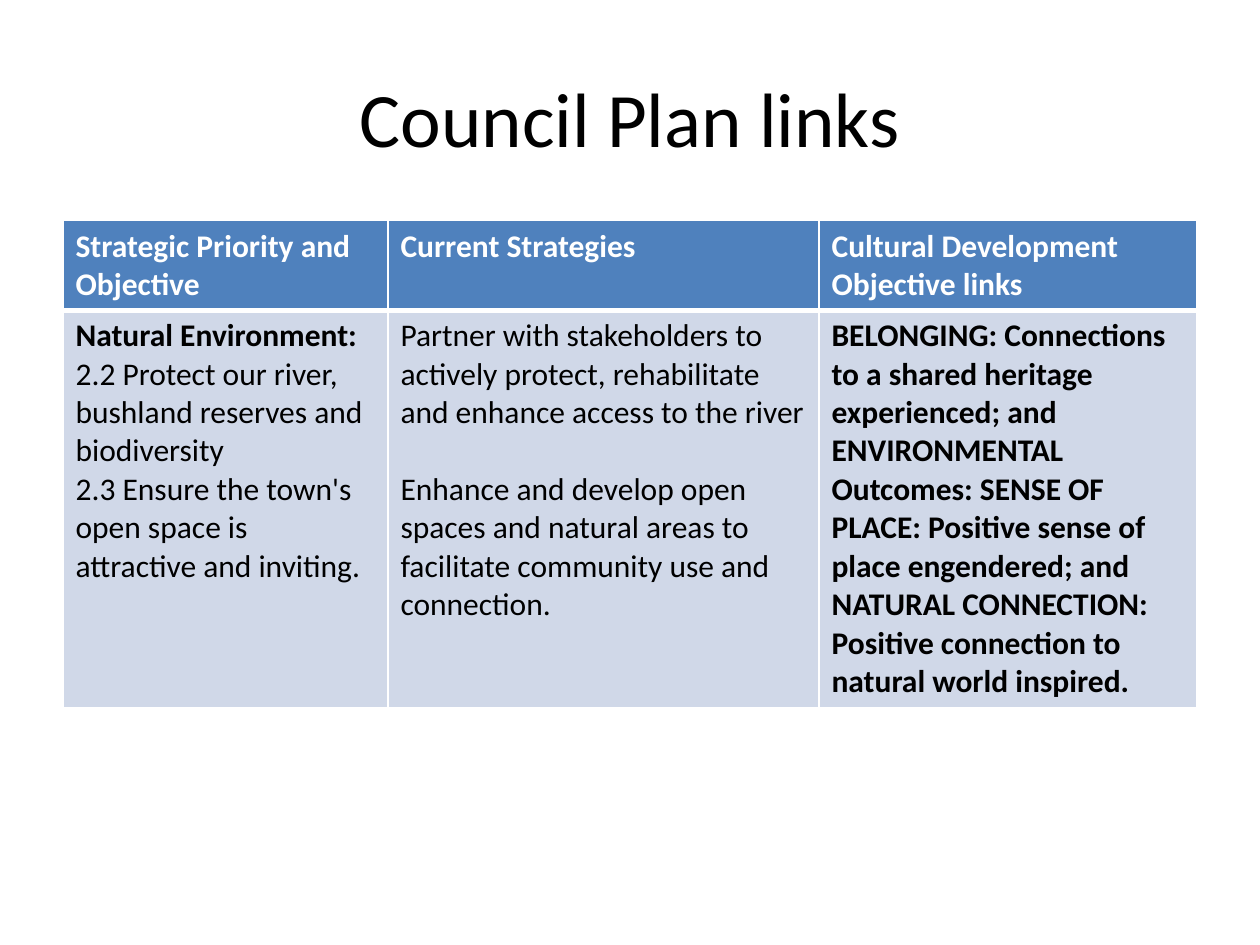
from dataclasses import dataclass

from lxml.etree import SubElement
from pptx import Presentation
from pptx.dml.color import RGBColor
from pptx.enum.text import MSO_ANCHOR, PP_ALIGN
from pptx.oxml.ns import qn
from pptx.util import Cm, Pt


@dataclass(frozen=True)
class Theme:
    font: str = "Calibri"
    title_size: int = 44
    table_size: int = 18
    text: str = "000000"
    header_text: str = "FFFFFF"
    header_fill: str = "4F81BD"
    body_fill: str = "D0D8E8"
    border: str = "FFFFFF"


theme = Theme()


def write_paragraph(paragraph, text, size=theme.table_size, color=theme.text,
                    bold=False, align=PP_ALIGN.LEFT, space_before=0):
    paragraph.alignment = align
    paragraph.space_before = Pt(space_before)
    run = paragraph.add_run()
    run.text = text
    run.font.name = theme.font
    run.font.size = Pt(size)
    run.font.bold = bold
    run.font.color.rgb = RGBColor.from_string(color)


def set_borders(cell, **widths):
    # Borders must precede the fill, so call this before filling the cell
    properties = cell._tc.get_or_add_tcPr()
    for side, width in widths.items():
        line = SubElement(properties, qn(f"a:ln{side}"), w=str(Pt(width)))
        fill = SubElement(line, qn("a:solidFill"))
        SubElement(fill, qn("a:srgbClr"), val=theme.border)


presentation = Presentation()
presentation.slide_width = Cm(25.4)
presentation.slide_height = Cm(19.05)
slide = presentation.slides.add_slide(presentation.slide_layouts[5])

# Title
title = slide.shapes.title
title.left, title.top, title.width, title.height = Cm(1.27), Cm(0.76), Cm(22.86), Cm(3.18)
title.text_frame.vertical_anchor = MSO_ANCHOR.MIDDLE
write_paragraph(title.text_frame.paragraphs[0], "Council Plan links",
                size=theme.title_size, align=PP_ALIGN.CENTER)

# Table content: each cell is a list of (text, format) paragraphs
header_format = {"color": theme.header_text, "bold": True}
rows = [
    [
        [("Strategic Priority and Objective", header_format)],
        [("Current Strategies", header_format)],
        [("Cultural Development Objective links", header_format)],
    ],
    [
        [
            ("Natural Environment:", {"bold": True}),
            ("2.2 Protect our river, bushland reserves and biodiversity", {}),
            ("2.3 Ensure the town's open space is attractive and inviting.", {}),
        ],
        [
            ("Partner with stakeholders to actively protect, rehabilitate "
             "and enhance access to the river", {}),
            ("Enhance and develop open spaces and natural areas to facilitate "
             "community use and connection.", {"space_before": 22}),
        ],
        [
            ("BELONGING: Connections to a shared heritage experienced; and "
             "ENVIRONMENTAL Outcomes: SENSE OF PLACE: Positive sense of place "
             "engendered; and NATURAL CONNECTION: Positive connection to "
             "natural world inspired.", {"bold": True}),
        ],
    ],
]
column_widths = [6.55, 8.69, 7.62]
row_heights = [1.78, 7.87]
row_fills = [theme.header_fill, theme.body_fill]
row_borders = [{"L": 1, "R": 1, "T": 1, "B": 3}, {"L": 1, "R": 1, "T": 3, "B": 1}]

# Table
table = slide.shapes.add_table(len(rows), len(column_widths), Cm(1.27), Cm(4.45),
                               Cm(sum(column_widths)), Cm(sum(row_heights))).table
for column, width in zip(table.columns, column_widths):
    column.width = Cm(width)
for row, height, contents, fill, borders in zip(
        table.rows, row_heights, rows, row_fills, row_borders):
    row.height = Cm(height)
    for cell, paragraphs in zip(row.cells, contents):
        set_borders(cell, **borders)
        cell.fill.solid()
        cell.fill.fore_color.rgb = RGBColor.from_string(fill)
        for index, (text, text_format) in enumerate(paragraphs):
            frame = cell.text_frame
            paragraph = frame.add_paragraph() if index else frame.paragraphs[0]
            write_paragraph(paragraph, text, **text_format)

presentation.save("out.pptx")
